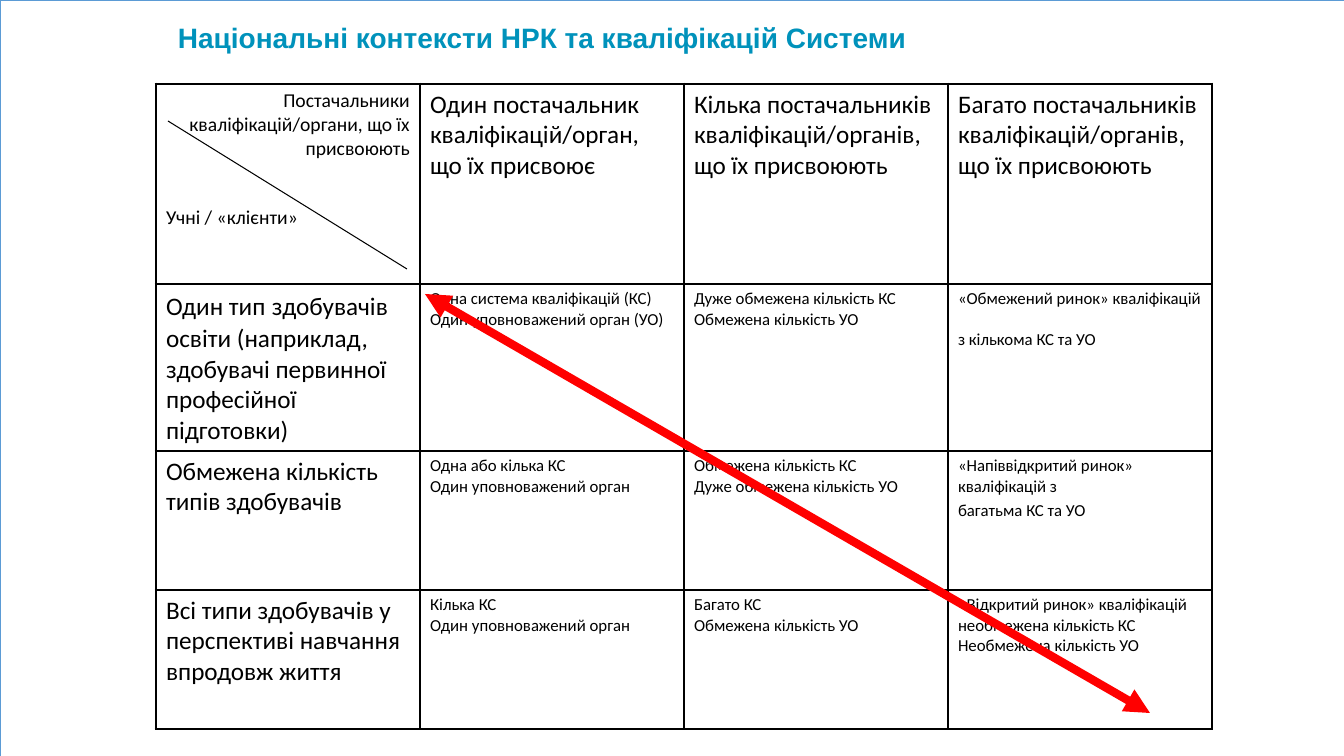
from dataclasses import dataclass

from lxml.etree import SubElement
from pptx import Presentation
from pptx.dml.color import RGBColor
from pptx.enum.shapes import MSO_CONNECTOR, MSO_SHAPE
from pptx.enum.text import MSO_ANCHOR, PP_ALIGN
from pptx.oxml.ns import qn
from pptx.util import Pt

EMU_PER_PX = 914400 / 100.8
SLIDE_BOX = (0, 0, 1344, 756)
TITLE_BOX = (168, -25, 988, 124)
TABLE_BOX = (156, 84, 1056, 645)
ROW_HEIGHTS = (200, 167, 139, 139)


@dataclass(frozen=True)
class Theme:
    """Colours, fonts and point sizes of the slide."""
    ink: str = "000000"
    paper: str = "FFFFFF"
    frame: str = "5B9BD5"
    heading: str = "0092BB"
    arrow: str = "FF0000"
    heading_font: str = "Arial"
    body_font: str = "Calibri"
    heading_size: float = 20
    label_size: float = 18
    corner_size: float = 14
    cell_size: float = 12
    outer_border: float = 2.25
    inner_border: float = 1


THEME = Theme()

TITLE = "Національні контексти НРК та кваліфікацій Системи"
CORNER = ("Постачальники кваліфікацій/органи, що їх присвоюють", "Учні / «клієнти»")
PROVIDERS = (
    "Один постачальник кваліфікацій/орган, що їх присвоює",
    "Кілька постачальників кваліфікацій/органів, що їх присвоюють",
    "Багато постачальників кваліфікацій/органів, що їх присвоюють",
)
LEARNERS = (
    ("Один тип", " ", "здобувачів освіти (наприклад, здобувачі первинної професійної підготовки)"),
    ("Обмежена кількість типів здобувачів",),
    ("Всі типи здобувачів у перспективі навчання впродовж життя",),
)
SYSTEMS = (
    (
        ("Одна система кваліфікацій (КС)\vОдин уповноважений орган (УО)",),
        ("Дуже обмежена кількість КС\vОбмежена кількість УО",),
        ("«Обмежений ринок» кваліфікацій", "з кількома КС та УО"),
    ),
    (
        ("Одна або кілька КС\vОдин уповноважений орган",),
        ("Обмежена кількість КС\vДуже обмежена кількість УО",),
        ("«Напіввідкритий ринок» кваліфікацій з", "багатьма КС та УО"),
    ),
    (
        ("Кілька КС\vОдин уповноважений орган",),
        ("Багато КС\vОбмежена кількість УО",),
        ("«Відкритий ринок» кваліфікацій\vнеобмежена кількість КС\vНеобмежена кількість УО",),
    ),
)
CORNER_GAP, MARKET_GAPS = 32, (14.6, 2.4, 0)


def px(length):
    """Turn pixels into EMU."""
    return round(length * EMU_PER_PX)


def style(para, size, font=THEME.body_font, color=THEME.ink, bold=False):
    """Set the font of a whole paragraph."""
    para.font.name = font
    para.font.size = Pt(size)
    para.font.bold = bold
    para.font.color.rgb = RGBColor.from_string(color)


def write_cell(cell, texts, size, gap=0):
    """Write one paragraph per text, with a gap before the later ones."""
    for index, text in enumerate(texts):
        frame = cell.text_frame
        para = frame.add_paragraph() if index else frame.paragraphs[0]
        para.text = text
        if index:
            para.space_before = Pt(gap)
        style(para, size)


def write_learner(cell, pieces):
    """Write a row label, whose separate spaces take the heading size."""
    para = cell.text_frame.paragraphs[0]
    for piece in pieces:
        span = para.add_run()
        span.text = piece
        if piece == " ":
            span.font.size = Pt(THEME.heading_size)
    style(para, THEME.label_size)


def border_cell(cell, outer_sides):
    """Draw the four borders, heavier on the outer sides."""
    properties = cell._tc.get_or_add_tcPr()
    for side in "LRTB":
        width = THEME.outer_border if side in outer_sides else THEME.inner_border
        line = SubElement(properties, qn(f"a:ln{side}"), w=str(Pt(width)))
        fill = SubElement(line, qn("a:solidFill"))
        SubElement(fill, qn("a:srgbClr"), val=THEME.ink)
    cell.fill.background()


def add_line(page, start, end, color, width, arrows=False):
    """Draw a straight line, with arrowheads at both ends if asked."""
    line = page.shapes.add_connector(
        MSO_CONNECTOR.STRAIGHT, *map(px, (*start, *end)))
    line.line.color.rgb = RGBColor.from_string(color)
    line.line.width = Pt(width)
    if arrows:
        outline = line.line._get_or_add_ln()
        for tag in ("a:headEnd", "a:tailEnd"):
            SubElement(outline, qn(tag), type="triangle")
    SubElement(line._element.spPr, qn("a:effectLst"))


def add_backdrop(page, box):
    """Draw the framed white sheet."""
    sheet = page.shapes.add_shape(MSO_SHAPE.RECTANGLE, *map(px, box))
    sheet.shadow.inherit = False
    sheet.fill.solid()
    sheet.fill.fore_color.rgb = RGBColor.from_string(THEME.paper)
    sheet.line.color.rgb = RGBColor.from_string(THEME.frame)
    sheet.line.width = Pt(0.5)


def add_title(page, box):
    """Write the slide title."""
    frame = page.shapes.add_textbox(*map(px, box)).text_frame
    frame.word_wrap = True
    frame.vertical_anchor = MSO_ANCHOR.MIDDLE
    para = frame.paragraphs[0]
    para.text = TITLE
    style(para, THEME.heading_size, THEME.heading_font, THEME.heading, True)


def add_matrix(page, box):
    """Build the matrix of providers and learners with its diagonals."""
    left, top, width, height = box
    count = len(ROW_HEIGHTS)
    table = page.shapes.add_table(count, count, *map(px, box)).table
    table.first_row = table.horz_banding = False
    for index, row_height in enumerate(ROW_HEIGHTS):
        table.columns[index].width = px(width / count)
        table.rows[index].height = px(row_height)

    corner = table.cell(0, 0)
    write_cell(corner, CORNER, THEME.corner_size, CORNER_GAP)
    corner.text_frame.paragraphs[0].alignment = PP_ALIGN.RIGHT
    for column, provider in enumerate(PROVIDERS, 1):
        write_cell(table.cell(0, column), (provider,), THEME.label_size)
    for row, (learner, systems, gap) in enumerate(zip(LEARNERS, SYSTEMS, MARKET_GAPS), 1):
        write_learner(table.cell(row, 0), learner)
        for column, texts in enumerate(systems, 1):
            write_cell(table.cell(row, column), texts, THEME.cell_size, gap)

    for row in range(count):
        for column in range(count):
            edges = {"L": column == 0, "R": column == count - 1,
                     "T": row == 0, "B": row == count - 1}
            border_cell(table.cell(row, column), [side for side in edges if edges[side]])

    add_line(page, (left + 12, top + 37), (left + 251, top + 185), THEME.ink, 0.75)
    add_line(page, (left + 269, top + 210), (left + width - 62, top + height - 16),
             THEME.arrow, 6, arrows=True)


def main():
    """Build and save the deck."""
    deck = Presentation()
    deck.slide_width, deck.slide_height = map(px, SLIDE_BOX[2:])
    page = deck.slides.add_slide(deck.slide_layouts[6])
    add_backdrop(page, SLIDE_BOX)
    add_title(page, TITLE_BOX)
    add_matrix(page, TABLE_BOX)
    deck.save("out.pptx")


if __name__ == "__main__":
    main()
